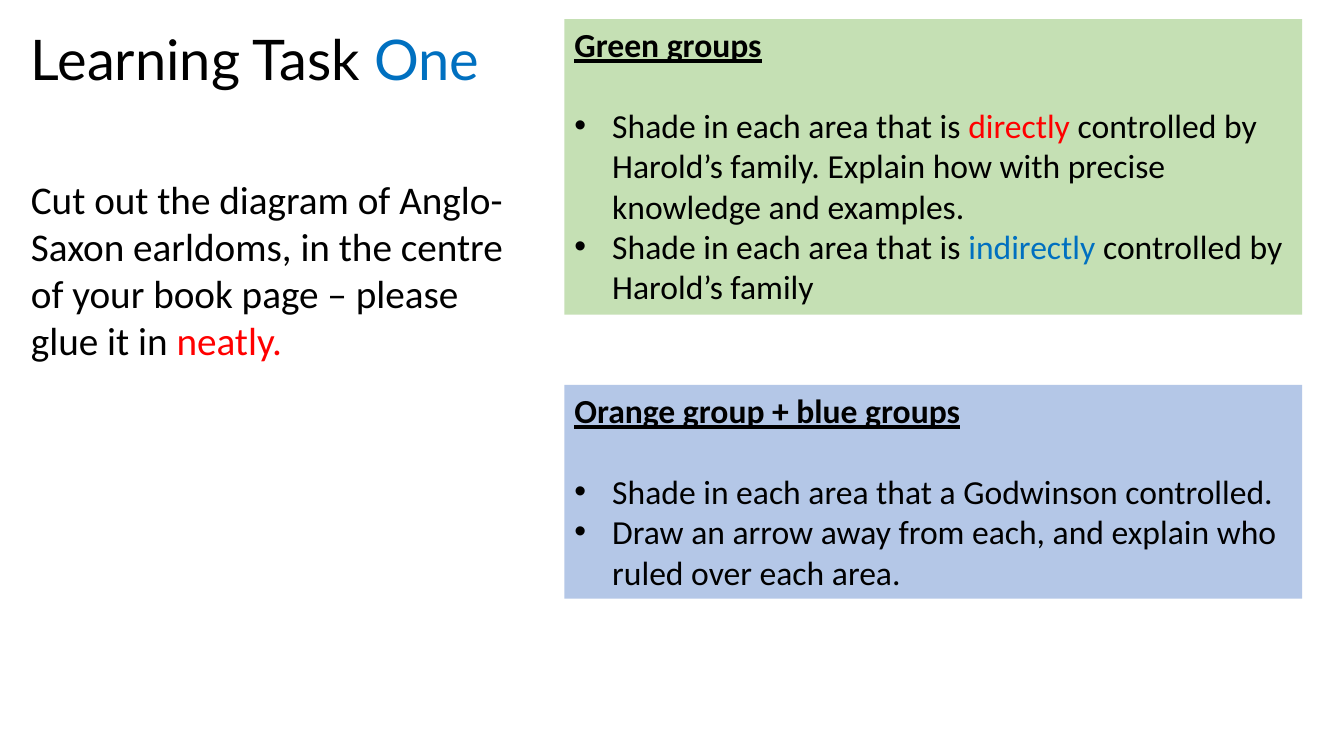
from dataclasses import dataclass

from lxml import etree
from pptx import Presentation
from pptx.dml.color import RGBColor
from pptx.enum import shapes, text
from pptx.oxml import ns
from pptx.util import Pt


@dataclass(frozen=True)
class Theme:
    black: str = "000000"
    red: str = "FF0000"
    blue: str = "0070C0"
    green_panel: str = "C5E0B4"
    blue_panel: str = "B4C7E7"
    heading_font: str = "Lato"
    body_font: str = "Calibri"
    heading_size: int = 40
    instruction_size: int = 28
    panel_size: int = 24


THEME = Theme()
LEFT, TOP = 15, 13.7
PANEL_LEFT, PANEL_WIDTH = 403.2, 527
BULLET_INDENT = 27
TITLE_GAP = 29


def apply_format(target, values):
    for attribute, value in values.items():
        setattr(target, attribute, value)


def write_runs(paragraph, runs, size, font=THEME.body_font, **emphasis):
    """Write (words, colour) pairs into a paragraph."""
    for words, colour in runs:
        run = paragraph.add_run()
        run.text = words
        apply_format(run.font, {"name": font, "size": Pt(size), **emphasis})
        run.font.color.rgb = RGBColor.from_string(colour)


def set_frame(frame, anchor=text.MSO_ANCHOR.TOP):
    apply_format(frame, {
        "word_wrap": True,
        "auto_size": text.MSO_AUTO_SIZE.SHAPE_TO_FIT_TEXT,
        "vertical_anchor": anchor,
    })


def add_words(slide, box, runs, size, font=THEME.body_font):
    frame = slide.shapes.add_textbox(*map(Pt, box)).text_frame
    set_frame(frame)
    write_runs(frame.paragraphs[0], runs, size, font)


def make_bullet(paragraph):
    properties = paragraph._p.get_or_add_pPr()
    properties.set("marL", str(Pt(BULLET_INDENT)))
    properties.set("indent", str(-Pt(BULLET_INDENT)))
    etree.SubElement(properties, ns.qn("a:buFont"), typeface="Arial")
    etree.SubElement(properties, ns.qn("a:buChar"), char="•")


def add_panel(slide, top, height, fill, title, tasks):
    box = map(Pt, (PANEL_LEFT, top, PANEL_WIDTH, height))
    panel = slide.shapes.add_shape(shapes.MSO_SHAPE.RECTANGLE, *box)
    panel.shadow.inherit = False
    panel.fill.solid()
    panel.fill.fore_color.rgb = RGBColor.from_string(fill)
    panel.line.fill.background()
    frame = panel.text_frame
    set_frame(frame)

    # Group title
    heading = frame.paragraphs[0]
    apply_format(heading, {"alignment": text.PP_ALIGN.LEFT,
                           "space_after": Pt(TITLE_GAP)})
    write_runs(heading, [(title, THEME.black)], THEME.panel_size,
               bold=True, underline=True)

    # Bulleted tasks
    for runs in tasks:
        task = frame.add_paragraph()
        task.alignment = text.PP_ALIGN.LEFT
        make_bullet(task)
        write_runs(task, runs, THEME.panel_size)


def main():
    deck = Presentation()
    apply_format(deck, {"slide_width": Pt(960), "slide_height": Pt(540)})
    slide = deck.slides.add_slide(deck.slide_layouts[6])
    black, red, blue = THEME.black, THEME.red, THEME.blue

    # Heading and instruction
    add_words(slide, (LEFT, TOP, 440, 55.4),
              [("Learning Task ", black), ("One", blue)],
              THEME.heading_size, THEME.heading_font)
    add_words(slide, (LEFT, 121.7, 359.3, 143.3),
              [("Cut out the diagram of Anglo-Saxon earldoms, in the centre "
                "of your book page – please glue it in ", black),
               ("neatly.", red)],
              THEME.instruction_size)

    # Group tasks
    add_panel(slide, TOP, 211, THEME.green_panel, "Green groups", [
        [("Shade in each area that is ", black), ("directly", red),
         (" controlled by Harold’s family. Explain how with precise "
          "knowledge and examples.", black)],
        [("Shade in each area that is ", black), ("indirectly", blue),
         (" controlled by Harold’s family", black)],
    ])
    add_panel(slide, 275, 152.6, THEME.blue_panel,
              "Orange group + blue groups", [
                  [("Shade in each area that a Godwinson controlled.", black)],
                  [("Draw an arrow away from each, and explain who ruled "
                    "over each area.", black)],
              ])

    deck.save("out.pptx")


if __name__ == "__main__":
    main()
